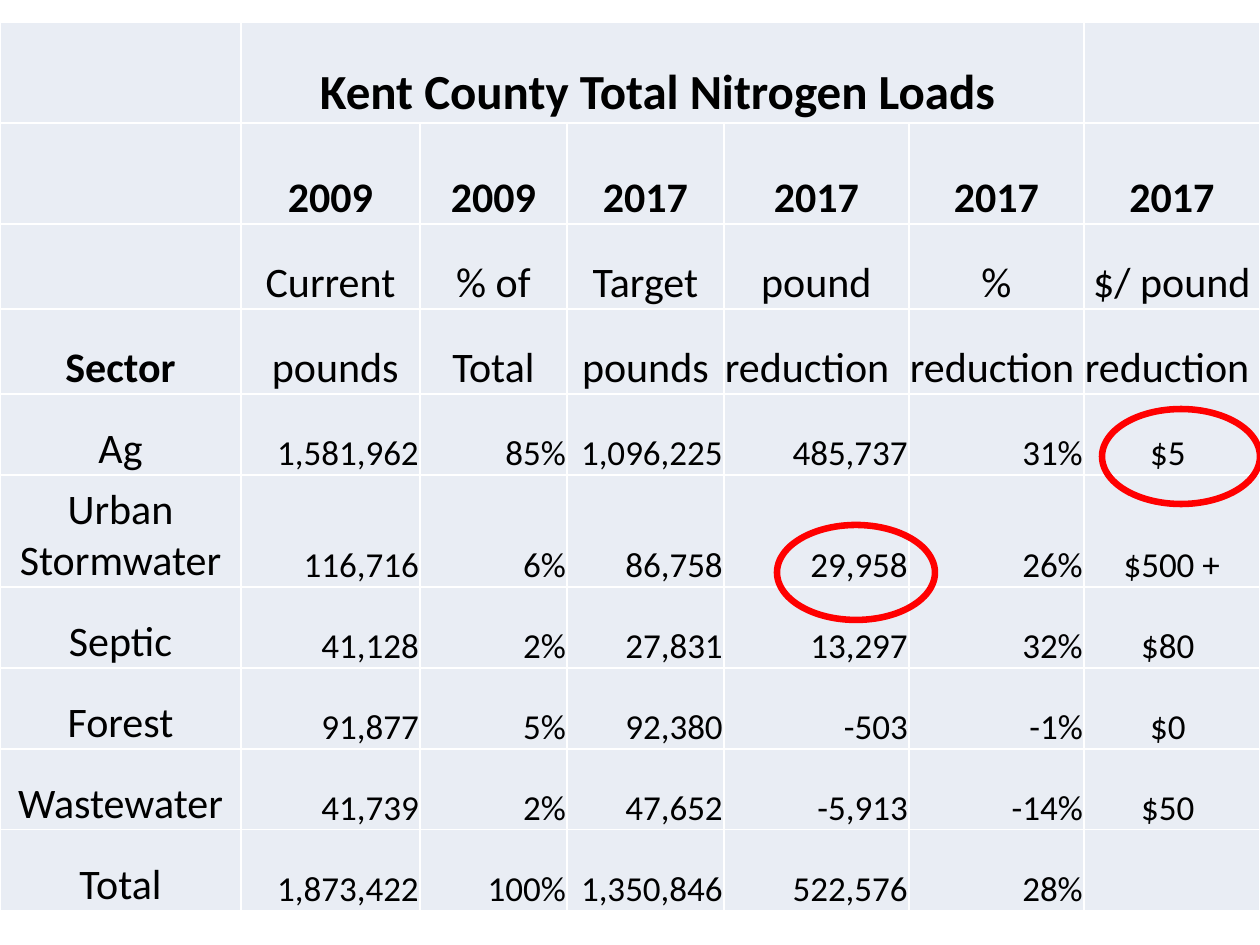
from lxml import etree
from pptx import Presentation
from pptx import util as u
from pptx.dml.color import RGBColor
from pptx.enum import shapes, text
from pptx.oxml import ns

SCALE = 914400 / 126  # EMU in one px
BLACK = RGBColor(0x00, 0x00, 0x00)
WHITE = RGBColor(0xFF, 0xFF, 0xFF)
RED = RGBColor(0xFF, 0x00, 0x00)
CELL = RGBColor(0xE9, 0xED, 0xF4)
LEFT, CENTER, RIGHT = text.PP_ALIGN.LEFT, text.PP_ALIGN.CENTER, text.PP_ALIGN.RIGHT

COLS = [241, 179, 147, 157, 185, 175, 176]
ROWS = [101, 101, 85, 85, 81, 112, 81, 81, 81, 81]
TITLE = "Kent County Total Nitrogen Loads"
HEADERS = [
    ["", "2009", "2009", "2017", "2017", "2017", "2017"],
    ["", "Current", "% of", "Target", "pound", "%", "$/ pound"],
    ["Sector", " pounds", "Total", "pounds", "reduction", "reduction", "reduction"],
]
SECTORS = [
    ["Ag", "1,581,962", "85%", "1,096,225", "485,737", "31%", "$5 "],
    ["Urban Stormwater", "116,716", "6%", "86,758", "29,958", "26%", "$500 +"],
    ["Septic", "41,128", "2%", "27,831", "13,297", "32%", "$80 "],
    ["Forest", "91,877", "5%", "92,380", "-503", "-1%", "$0 "],
    ["Wastewater", "41,739", "2%", "47,652", "-5,913", "-14%", "$50 "],
    ["Total", "1,873,422", "100%", "1,350,846", "522,576", "28%", ""],
]


def px(n):
    return u.Emu(round(n * SCALE))


def write(cell, words, size=24, bold=False, align=CENTER, inset=1):
    cell.vertical_anchor = text.MSO_ANCHOR.BOTTOM
    cell.margin_left = px(inset)
    cell.margin_right = cell.margin_top = px(1)
    cell.margin_bottom = 0
    if not words:
        return
    p = cell.text_frame.paragraphs[0]
    p.alignment = align
    r = p.add_run()
    r.text = words
    r.font.name, r.font.size, r.font.bold = "Calibri", u.Pt(size), bold
    r.font.color.rgb = BLACK


def paint(cell):
    """White border on every side, then the cell's fill."""
    tc_pr = cell._tc.get_or_add_tcPr()
    for side in ("lnL", "lnR", "lnT", "lnB"):
        ln = etree.SubElement(tc_pr, ns.qn(f"a:{side}"), w=str(u.Pt(1)))
        fill = etree.SubElement(ln, ns.qn("a:solidFill"))
        etree.SubElement(fill, ns.qn("a:srgbClr"), val=str(WHITE))
    cell.fill.solid()
    cell.fill.fore_color.rgb = CELL


def add_loads_table(slide, x, y):
    frame = slide.shapes.add_table(len(ROWS), len(COLS), px(x), px(y),
                                   px(sum(COLS)), px(sum(ROWS)))
    table = frame.table
    table.first_row = table.horz_banding = False
    for col, width in zip(table.columns, COLS):
        col.width = px(width)
    for row, height in zip(table.rows, ROWS):
        row.height = px(height)
    for cell in table.iter_cells():
        paint(cell)

    # Title across the five load columns
    table.cell(0, 1).merge(table.cell(0, 5))
    write(table.cell(0, 1), TITLE, size=28, bold=True, align=LEFT, inset=79)

    # Column headings
    for i, heads in enumerate(HEADERS, 1):
        for j, words in enumerate(heads):
            write(table.cell(i, j), words, bold=i == 1 or words == "Sector",
                  align=LEFT if words == "reduction" else CENTER)

    # Sector name, right-aligned loads, centred cost
    for i, values in enumerate(SECTORS, 1 + len(HEADERS)):
        for j, words in enumerate(values):
            write(table.cell(i, j), words, size=20 if j else 24,
                  align=RIGHT if 0 < j < 6 else CENTER)


def add_ring(slide, x, y, w=158, h=95):
    sp = slide.shapes.add_shape(shapes.MSO_SHAPE.OVAL, px(x), px(y), px(w), px(h))
    sp.shadow.inherit = False
    sp.fill.background()
    sp.line.color.rgb = RED
    sp.line.width = u.Pt(3.75)


def main():
    prs = Presentation()
    prs.slide_width, prs.slide_height = px(1260), px(945)
    slide = prs.slides.add_slide(prs.slide_layouts[6])
    add_loads_table(slide, 0, 22)
    # Rings around the stormwater reduction and the Ag cost
    add_ring(slide, 777, 525)
    add_ring(slide, 1102, 409)
    prs.save("out.pptx")


if __name__ == "__main__":
    main()
